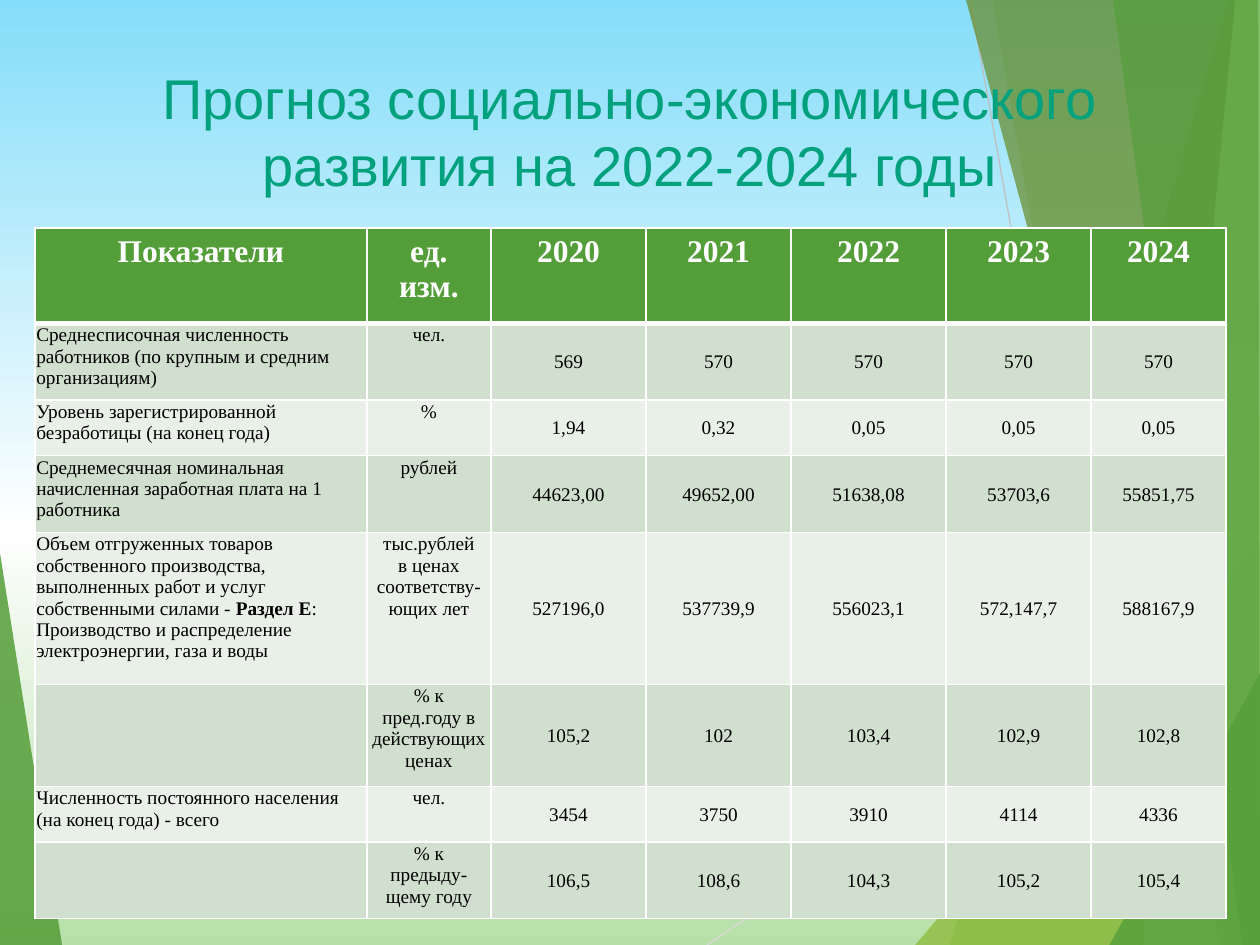
from lxml import etree
from pptx import Presentation
from pptx import util as u
from pptx.dml import color
from pptx.enum import shapes, text
from pptx.oxml import ns

GREEN = "549E39"
WHITE = "FFFFFF"
W, H = 720, 540


def rgb(code):
    return color.RGBColor.from_string(code)


def node(up, tag, **attrs):
    return etree.SubElement(up, ns.qn(tag), {k: str(v) for k, v in attrs.items()})


def apply(item, form):
    for key, val in form.items():
        setattr(item, key, val)


class Deck:
    body = {"name": "Times New Roman", "size": u.Pt(11), "bold": False}
    head = {"name": "Times New Roman", "size": u.Pt(18), "bold": True}
    title = {"name": "Arial", "size": u.Pt(32)}
    tight = {"margin_left": u.Pt(0.72), "margin_right": u.Pt(0.72),
             "margin_top": u.Pt(0.72), "margin_bottom": 0}
    bands = ["E9F0E8", "D1DFCE"]

    def __init__(self):
        self.prs = Presentation()
        apply(self.prs, {"slide_width": u.Pt(W), "slide_height": u.Pt(H)})
        self.slide = self.prs.slides.add_slide(self.prs.slide_layouts[6])

    def blend(self, fill, root, stops, angle):
        fill.gradient()
        fill.gradient_angle = angle
        group = root.xpath(".//a:gsLst")[0]
        for stop in list(group):
            group.remove(stop)
        for pos, code in stops:
            node(node(group, "a:gs", pos=pos * 1000), "a:srgbClr", val=code)

    def back(self, stops):
        self.blend(self.slide.background.fill, self.slide.element, stops, 270)

    def wedge(self, points, code, alpha):
        pts = [(u.Pt(x), u.Pt(y)) for x, y in points]
        form = self.slide.shapes.build_freeform(*pts[0])
        form.add_line_segments(pts[1:], close=True)
        shape = form.convert_to_shape()
        shape.shadow.inherit = False
        shape.fill.solid()
        shape.fill.fore_color.rgb = rgb(code)
        shape.line.fill.background()
        tint = shape.element.xpath("./p:spPr/a:solidFill/a:srgbClr")[0]
        node(tint, "a:alpha", val=alpha * 1000)

    def line(self, ends, code):
        rule = self.slide.shapes.add_connector(
            shapes.MSO_CONNECTOR.STRAIGHT, *[u.Pt(v) for v in ends])
        rule.line.width = u.Pt(0.75)
        rule.line.color.rgb = rgb(code)
        node(rule.element.spPr, "a:effectLst")

    def label(self, words, rect, stops, edge):
        box = self.slide.shapes.add_textbox(*[u.Pt(v) for v in rect])
        frame = box.text_frame
        apply(frame, {"word_wrap": True,
                      "vertical_anchor": text.MSO_ANCHOR.BOTTOM})
        par = frame.paragraphs[0]
        par.alignment = text.PP_ALIGN.CENTER
        run = par.add_run()
        run.text = words
        apply(run.font, self.title)
        self.blend(run.font.fill, box.element, stops, 90)
        props = box.element.xpath(".//a:rPr")[0]
        line = node(props, "a:ln", w=u.Pt(0.75))
        node(node(line, "a:solidFill"), "a:srgbClr", val=edge)
        props.insert(0, line)

    def cell(self, cell, words, row, col):
        first = row == 0
        widths = {"L": 1, "R": 1, "T": 3 if row == 1 else 1, "B": 3 if first else 1}
        props = cell._tc.get_or_add_tcPr()
        for side, width in widths.items():
            line = node(props, f"a:ln{side}", w=u.Pt(width))
            node(node(line, "a:solidFill"), "a:srgbClr", val=WHITE)
        cell.fill.solid()
        cell.fill.fore_color.rgb = rgb(GREEN if first else self.bands[row % 2])
        if not first:
            apply(cell, self.tight)
        mid = not first and col > 1
        cell.vertical_anchor = text.MSO_ANCHOR.MIDDLE if mid else text.MSO_ANCHOR.TOP
        par = cell.text_frame.paragraphs[0]
        if first or col:
            par.alignment = text.PP_ALIGN.CENTER
        style = self.head if first else self.body
        apply(par.font, style)
        for part, bit in enumerate(words.split("*")):
            for step, piece in enumerate(bit.split("\n")):
                if step:
                    par.add_line_break()
                if piece:
                    run = par.add_run()
                    run.text = piece
                    apply(run.font, {**style, "bold": first or part == 1})
                    run.font.color.rgb = rgb(WHITE if first else "000000")

    def table(self, rows, left, top, wide, high):
        size = [u.Pt(v) for v in (left, top, sum(wide), sum(high))]
        grid = self.slide.shapes.add_table(len(rows), len(wide), *size).table
        for col, width in zip(grid.columns, wide):
            col.width = u.Pt(width)
        for row, height in zip(grid.rows, high):
            row.height = u.Pt(height)
        for r, row in enumerate(rows):
            for c, words in enumerate(row):
                self.cell(grid.cell(r, c), words, r, c)


ROWS = [
    ["Показатели", "ед. изм.", "2020", "2021", "2022", "2023", "2024"],
    ["Среднесписочная численность работников (по крупным и средним организациям)",
     "чел.", "569", "570", "570", "570", "570"],
    ["Уровень зарегистрированной безработицы (на конец года)",
     "%", "1,94", "0,32", "0,05", "0,05", "0,05"],
    ["Среднемесячная номинальная начисленная заработная плата на 1 работника",
     "рублей", "44623,00", "49652,00", "51638,08", "53703,6", "55851,75"],
    ["Объем отгруженных товаров собственного производства, выполненных работ "
     "и услуг собственными силами - *Раздел E*: Производство и распределение "
     "электроэнергии, газа и воды", "тыс.рублей\nв ценах соответству-ющих лет",
     "527196,0", "537739,9", "556023,1", "572,147,7", "588167,9"],
    ["", "% к\nпред.году в действующих ценах",
     "105,2", "102", "103,4", "102,9", "102,8"],
    ["Численность постоянного населения (на конец года) - всего",
     "чел.", "3454", "3750", "3910", "4114", "4336"],
    ["", "% к\nпредыду-щему году", "106,5", "108,6", "104,3", "105,2", "105,4"],
]
BASE, ROOF = (W, H), (W, 0)
WEDGES = [
    ([(702, 0), (543, H), BASE, ROOF], GREEN, 30),
    ([(567, 0), (662, H), BASE, ROOF], GREEN, 20),
    ([(523, H), (W, 309), BASE], "8AB833", 72),
    ([(552, 0), (698, H), BASE, ROOF], "678A26", 70),
    ([(706, 0), (653, H), BASE, ROOF], "93D07D", 70),
    ([(636, 0), (710, H), BASE, (719, 0)], GREEN, 65),
    ([(634, H), (W, 385), BASE], GREEN, 80),
]


def main():
    deck = Deck()
    deck.back([(0, "84DDF9"), (56, WHITE), (100, "B7E0A8")])
    deck.wedge([(0, 316), (35.5, H), (0, H)], GREEN, 85)
    deck.line((404, H, W, 329), "D9D9D9")
    deck.line((554.5, 0, 651, H), "BFBFBF")
    for wedge in WEDGES:
        deck.wedge(*wedge)
    deck.label("Прогноз социально-экономического развития на 2022-2024 годы",
               (48, 31.5, 624, 85),
               [(0, "01654F"), (48, "02A17E"), (100, "2BFCCF")], "014B3B")
    deck.table(ROWS, 20, 130.3, [189.6, 71, 88.6, 82.9, 88.6, 82.9, 77],
               [54.5, 43.8, 31.8, 43.8, 87, 58.2, 31.8, 43.8])
    deck.prs.save("out.pptx")


if __name__ == "__main__":
    main()
